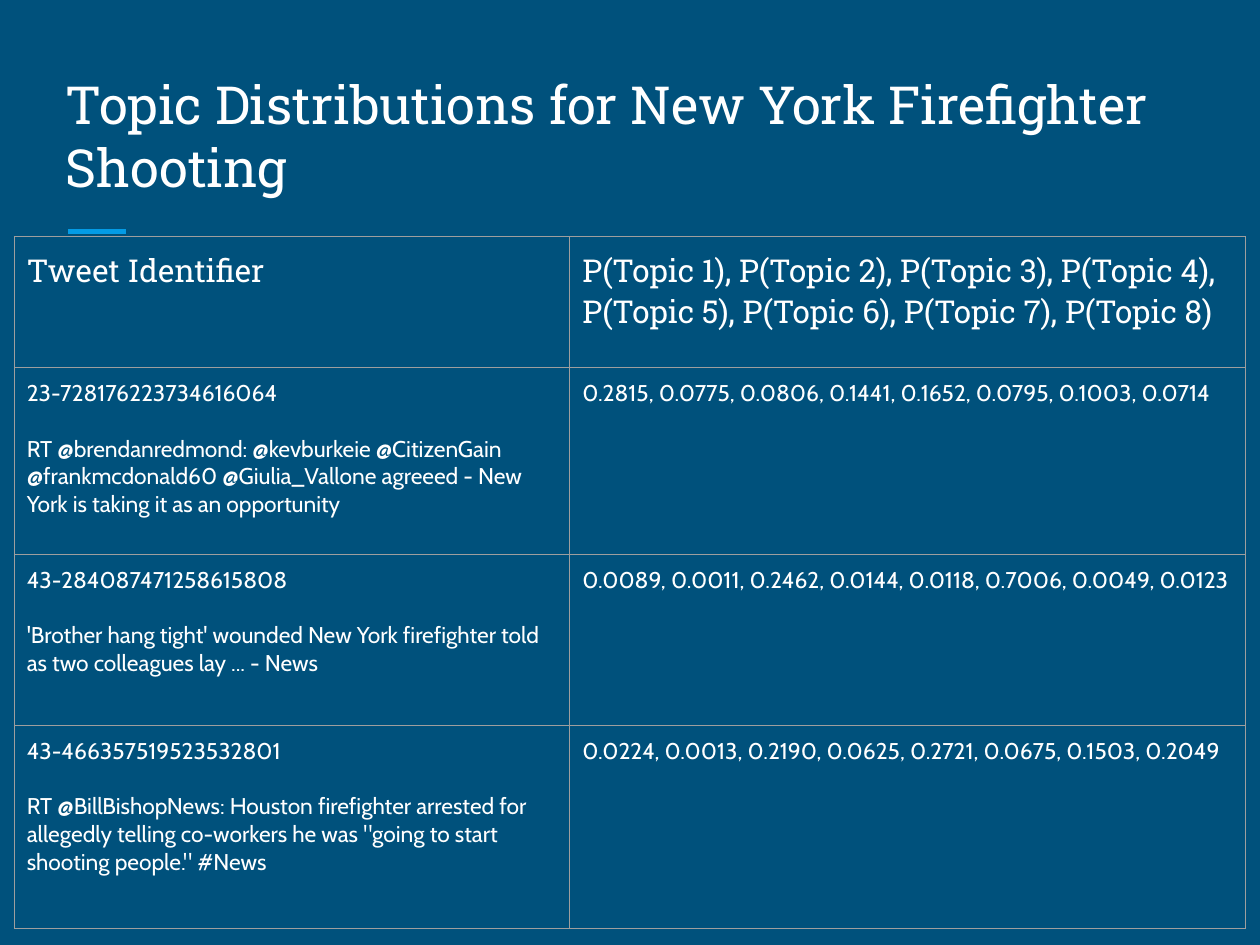
from lxml import etree
from pptx import Presentation
from pptx import util as u
from pptx.dml.color import RGBColor
from pptx.enum import shapes, text
from pptx.oxml import ns

theme = {
    "background": RGBColor.from_string("00517C"),
    "accent": RGBColor.from_string("039BE5"),
    "text": RGBColor.from_string("FFFFFF"),
    "border": "9E9E9E",
    "title": {"name": "Roboto Slab", "size": u.Pt(30)},
    "header": {"name": "Roboto Slab", "size": u.Pt(18)},
    "body": {"name": "Cabin", "size": u.Pt(13)},
}
INSET = u.Cm(0.25)
MARGINS = {f"margin_{side}": INSET for side in ("left", "top", "right", "bottom")}


def apply(target, values):
    for name, value in values.items():
        setattr(target, name, value)


def add_borders(cell):
    properties = cell._tc.get_or_add_tcPr()
    for position, edge in enumerate(("lnL", "lnR", "lnT", "lnB")):
        line = etree.Element(ns.qn(f"a:{edge}"), w=str(u.Pt(0.75)))
        fill = etree.SubElement(line, ns.qn("a:solidFill"))
        etree.SubElement(fill, ns.qn("a:srgbClr"), val=theme["border"])
        properties.insert(position, line)


presentation = Presentation()
apply(presentation, {"slide_width": u.Cm(25.4), "slide_height": u.Cm(19.05)})
slide = presentation.slides.add_slide(presentation.slide_layouts[5])
slide.background.fill.solid()
slide.background.fill.fore_color.rgb = theme["background"]

# Title
title = slide.shapes.title
apply(title, {"left": u.Cm(1.08), "top": u.Cm(1.35),
              "width": u.Cm(23.24), "height": u.Cm(2.9)})
apply(title.text_frame, {
    **MARGINS, "word_wrap": True, "auto_size": text.MSO_AUTO_SIZE.NONE,
    "vertical_anchor": text.MSO_ANCHOR.BOTTOM,
    "text": "Topic Distributions for New York Firefighter Shooting"})
paragraph = title.text_frame.paragraphs[0]
apply(paragraph, {"alignment": text.PP_ALIGN.LEFT, "line_spacing": 1.0})
apply(paragraph.font, theme["title"])
paragraph.font.color.rgb = theme["text"]

# Accent rule under the title
rule = slide.shapes.add_connector(
    shapes.MSO_CONNECTOR.STRAIGHT, u.Cm(1.37), u.Cm(4.67), u.Cm(2.54), u.Cm(4.67))
rule.line.color.rgb = theme["accent"]
rule.line.width = u.Pt(3)
etree.SubElement(rule._element.spPr, ns.qn("a:effectLst"))

# Topic table: each cell is a list of paragraphs
rows = [
    (["Tweet Identifier"],
     ["P(Topic 1), P(Topic 2), P(Topic 3), P(Topic 4), "
      "P(Topic 5), P(Topic 6), P(Topic 7), P(Topic 8)"]),
    (["23-728176223734616064",
      "RT @brendanredmond: @kevburkeie @CitizenGain @frankmcdonald60 "
      "@Giulia_Vallone agreeed - New York is taking it as an opportunity"],
     ["0.2815, 0.0775, 0.0806, 0.1441, 0.1652, 0.0795, 0.1003, 0.0714"]),
    (["43-284087471258615808",
      "'Brother hang tight' wounded New York firefighter told "
      "as two colleagues lay ... - News"],
     ["0.0089, 0.0011, 0.2462, 0.0144, 0.0118, 0.7006, 0.0049, 0.0123"]),
    (["43-466357519523532801",
      "RT @BillBishopNews: Houston firefighter arrested for allegedly telling "
      "co-workers he was \"going to start shooting people.\" #News"],
     ["0.0224, 0.0013, 0.2190, 0.0625, 0.2721, 0.0675, 0.1503, 0.2049"]),
]
column_widths = [11.2, 13.61]
row_heights = [2.64, 3.76, 3.45, 4.09]
table = slide.shapes.add_table(
    len(rows), len(column_widths), u.Cm(0.29), u.Cm(4.77),
    u.Cm(sum(column_widths)), u.Cm(sum(row_heights))).table
apply(table, {"first_row": False, "horz_banding": False})
for column, width in zip(table.columns, column_widths):
    column.width = u.Cm(width)
for row, height in zip(table.rows, row_heights):
    row.height = u.Cm(height)

for row_index, row in enumerate(rows):
    is_header = row_index == 0
    for column_index, lines in enumerate(row):
        cell = table.cell(row_index, column_index)
        apply(cell, {**MARGINS, "vertical_anchor": text.MSO_ANCHOR.TOP,
                     "text": "\n".join(lines)})
        cell.fill.background()
        add_borders(cell)
        for paragraph in cell.text_frame.paragraphs:
            paragraph.space_after = u.Pt(0 if is_header else 16)
            apply(paragraph.font, theme["header" if is_header else "body"])
            paragraph.font.color.rgb = theme["text"]

presentation.save("out.pptx")
